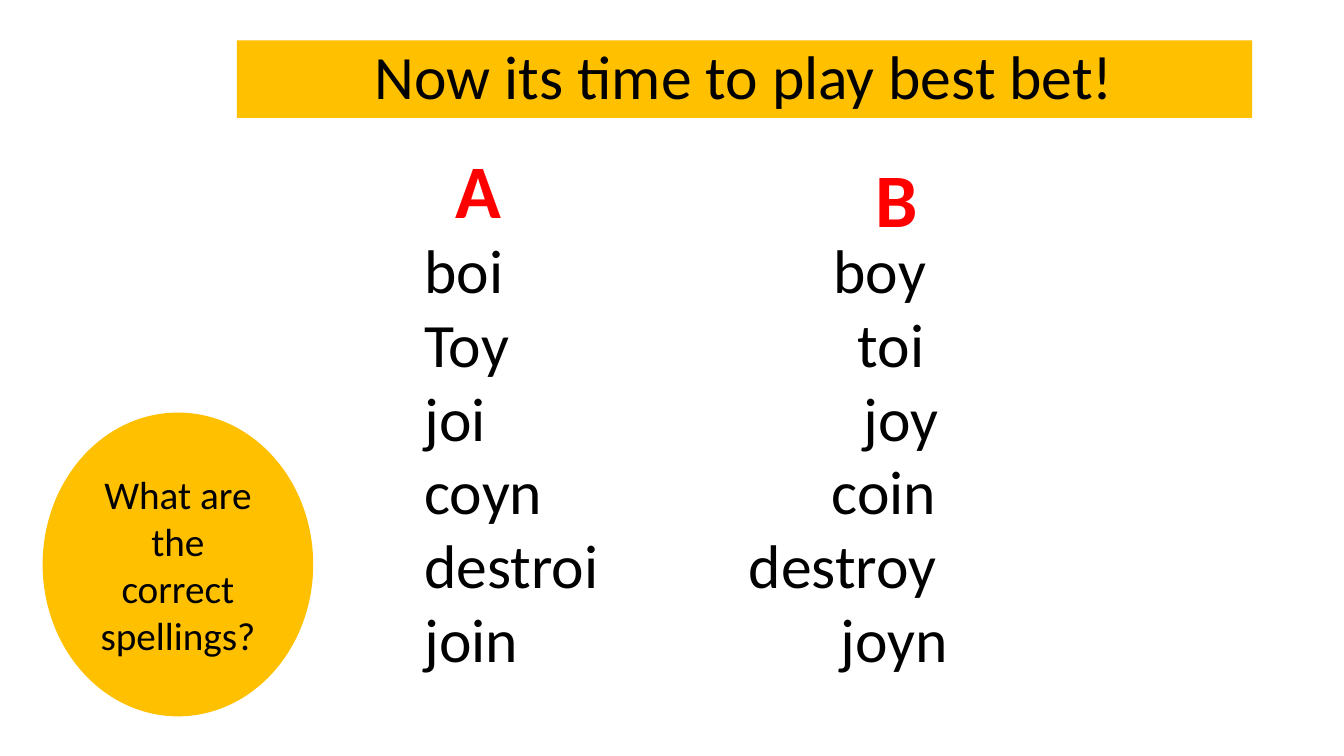
from lxml.etree import SubElement
from pptx import Presentation
from pptx.dml.color import RGBColor
from pptx.enum.shapes import MSO_SHAPE
from pptx.enum.text import MSO_ANCHOR, PP_ALIGN
from pptx.oxml.ns import qn
from pptx.util import Inches, Pt

AMBER, BLACK, RED = "FFC000", "000000", "FF0000"

# Spelling A, spelling B, and the distance of B from the text's left edge
WORD_PAIRS = [
    ("boi", "boy", 4.06),
    ("Toy", "toi", 4.3),
    ("joi", "joy", 4.36),
    ("coyn", "coin", 4.04),
    ("destroi", "destroy", 3.22),
    ("join", "joyn", 4.13),
]


def rgb(value):
    return RGBColor.from_string(value)


class SlideBuilder:
    font = "Calibri"

    def __init__(self, slide):
        self.slide = slide

    def style(self, p, size, color=BLACK, bold=False):
        p.font.name = self.font
        p.font.size = Pt(size)
        p.font.bold = bold
        p.font.color.rgb = rgb(color)

    def banner(self, kind, box, text, size, outlined=False):
        """Add an amber shape with centred text."""
        s = self.slide.shapes.add_shape(kind, *map(Inches, box))
        s.shadow.inherit = False
        s.fill.solid()
        s.fill.fore_color.rgb = rgb(AMBER)
        if outlined:
            s.line.color.rgb = rgb(AMBER)
            s.line.width = Pt(1)
        else:
            s.line.fill.background()
        tf = s.text_frame
        tf.word_wrap = True
        tf.vertical_anchor = MSO_ANCHOR.MIDDLE
        p = tf.paragraphs[0]
        p.text = text
        p.alignment = PP_ALIGN.CENTER
        self.style(p, size)
        return p

    def text_box(self, box):
        tf = self.slide.shapes.add_textbox(*map(Inches, box)).text_frame
        tf.word_wrap = True
        return tf

    def heading(self, box, text):
        p = self.text_box(box).paragraphs[0]
        p.text = text
        self.style(p, 54, RED, bold=True)

    def word_list(self, box, pairs):
        tf = self.text_box(box)
        for i, (first, second, stop) in enumerate(pairs):
            p = tf.add_paragraph() if i else tf.paragraphs[0]
            p.text = f"{first}\t{second}"
            tabs = SubElement(p._p.get_or_add_pPr(), qn("a:tabLst"))
            SubElement(tabs, qn("a:tab"), pos=str(Inches(stop)), algn="l")
            self.style(p, 44)


def main():
    prs = Presentation()
    prs.slide_width, prs.slide_height = Inches(13.33), Inches(7.5)
    page = SlideBuilder(prs.slides.add_slide(prs.slide_layouts[6]))

    title = page.banner(MSO_SHAPE.RECTANGLE, (2.35, 0.4, 10.07, 0.77),
                        "Now its time to play best bet!", 44)
    title.line_spacing = 0.9
    page.heading((4.42, 1.37, 0.66, 1.01), "A")
    page.heading((8.59, 1.46, 0.54, 1.01), "B")
    page.word_list((4.11, 2.25, 5.42, 4.5), WORD_PAIRS)
    page.banner(MSO_SHAPE.OVAL, (0.43, 4.1, 2.67, 3),
                "What are the correct spellings?", 28, outlined=True)
    prs.save("out.pptx")


if __name__ == "__main__":
    main()
